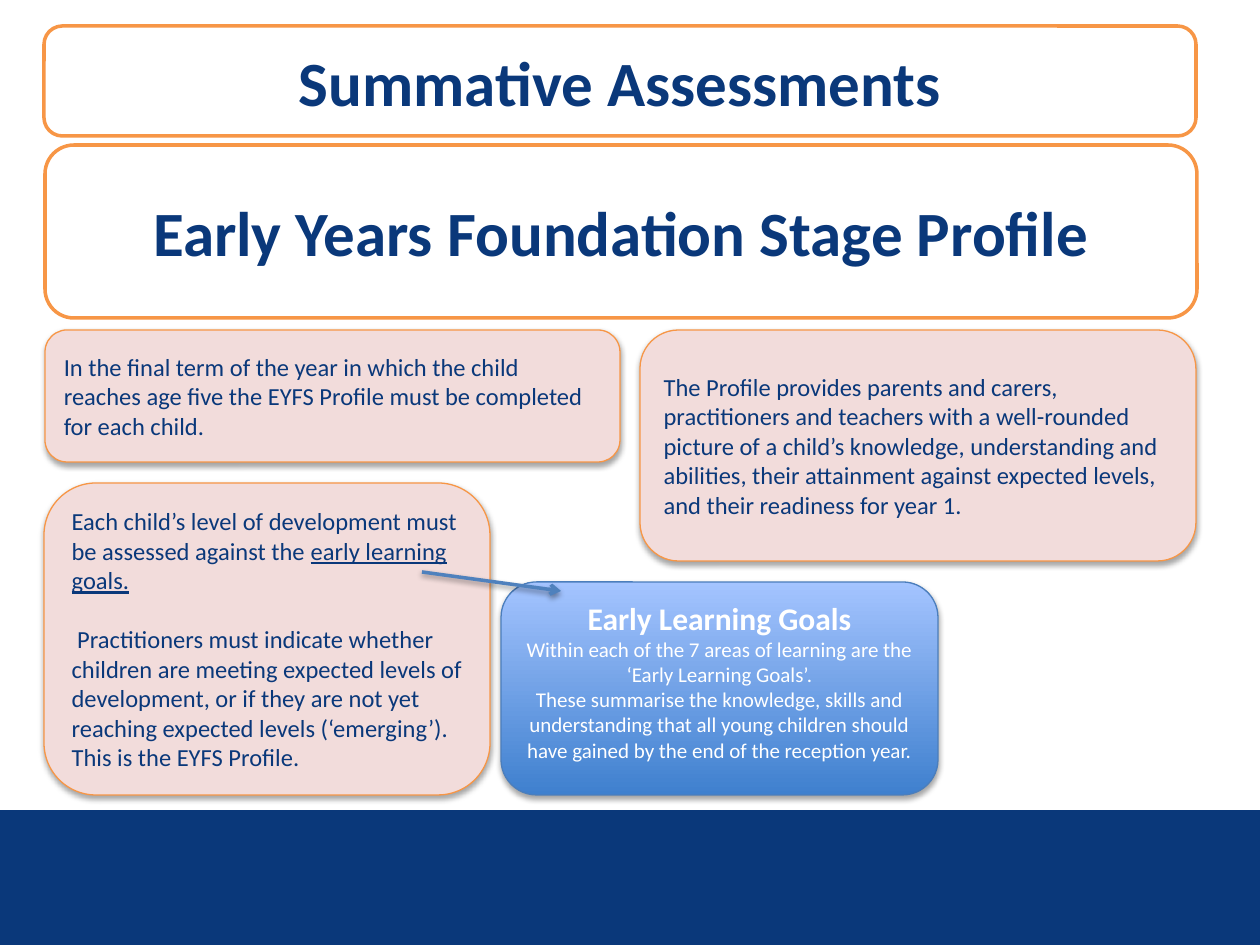
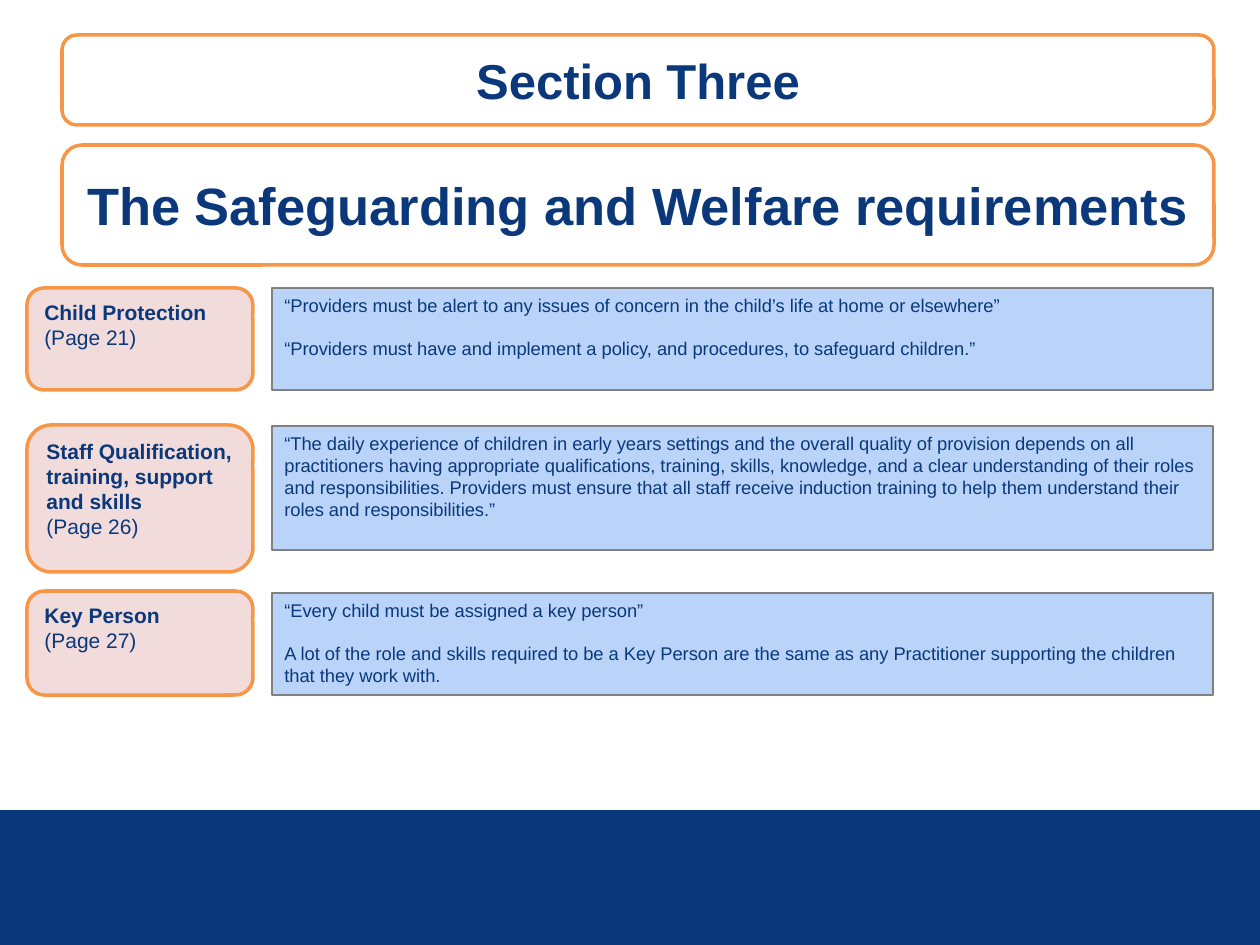
from dataclasses import dataclass
from lxml import etree
from pptx import Presentation
from pptx.dml.color import RGBColor
from pptx.enum.shapes import MSO_CONNECTOR, MSO_SHAPE
from pptx.enum.text import MSO_ANCHOR, PP_ALIGN
from pptx.oxml.ns import qn
from pptx.slide import Slide
from pptx.util import Emu, Pt

RECT = MSO_SHAPE.RECTANGLE
ROUND = MSO_SHAPE.ROUNDED_RECTANGLE
CALLOUT = MSO_SHAPE.ROUNDED_RECTANGULAR_CALLOUT
STRAIGHT = MSO_CONNECTOR.STRAIGHT
LEFT, CENTER = PP_ALIGN.LEFT, PP_ALIGN.CENTER
TOP, MIDDLE = MSO_ANCHOR.TOP, MSO_ANCHOR.MIDDLE

NAVY = RGBColor(0x0A, 0x38, 0x7A)
WHITE = RGBColor(0xFF, 0xFF, 0xFF)
ORANGE = RGBColor(0xF7, 0x96, 0x46)
PINK = RGBColor(0xF2, 0xDC, 0xDB)
PALE = RGBColor(0xB9, 0xD3, 0xF9)
GRAY = RGBColor(0x80, 0x80, 0x80)
DEEP = RGBColor(0x3F, 0x80, 0xCE)
LIGHT = RGBColor(0xA4, 0xC4, 0xFF)
EDGE = RGBColor(0x4B, 0x7E, 0xBC)
BLUE = RGBColor(0x4F, 0x81, 0xBD)

PX_PER_INCH = 126
WIDE, HIGH = 1260, 945


def px(n: int) -> Emu:
    return Emu(round(n * 914400 / PX_PER_INCH))


@dataclass(frozen=True)
class Para:
    text: str
    size: float
    bold: bool = False
    gap: int = 0  # points before
    under: str = ""  # underlined ending


@dataclass(frozen=True)
class Look:
    kind: MSO_SHAPE
    fill: tuple[RGBColor, ...]  # two colours run from bottom to top
    line: RGBColor | None = None
    width: float = 0.75
    shade: bool = False
    ink: RGBColor = NAVY
    align: PP_ALIGN = LEFT
    anchor: MSO_ANCHOR = TOP


@dataclass(frozen=True)
class Box:
    x: int
    y: int
    w: int
    h: int
    paras: tuple[Para, ...] = ()


# Shared styles
BAND = Look(RECT, (NAVY,))
TITLE = Look(ROUND, (WHITE,), ORANGE, 2, align=CENTER, anchor=MIDDLE)
CARD = Look(ROUND, (PINK,), ORANGE, shade=True, anchor=MIDDLE)
GOALS = Look(ROUND, (DEEP, LIGHT), EDGE, shade=True, ink=WHITE, align=CENTER)
LABEL = Look(CALLOUT, (PINK,), ORANGE, 2)
QUOTE = Look(RECT, (PALE,), GRAY)


def add_shade(effects: etree._Element, dist: int, alpha: int) -> None:
    shade = etree.SubElement(effects, qn("a:outerShdw"), blurRad="40000",
                             dist=str(dist), dir="5400000", rotWithShape="0")
    color = etree.SubElement(shade, qn("a:srgbClr"), val="000000")
    etree.SubElement(color, qn("a:alpha"), val=str(alpha * 1000))


def add_box(slide: Slide, box: Box, look: Look, face: str = "Calibri") -> None:
    shape = slide.shapes.add_shape(look.kind, px(box.x), px(box.y), px(box.w), px(box.h))
    if look.kind == CALLOUT:
        # The tip stays inside, so the outline reads as a rounded box
        for i, value in enumerate((0.499, -0.232, 0.167)):
            shape.adjustments[i] = value

    if len(look.fill) == 2:
        shape.fill.gradient()
        shape.fill.gradient_angle = 90
        for stop, color in zip(shape.fill.gradient_stops, look.fill):
            stop.color.rgb = color
    else:
        shape.fill.solid()
        shape.fill.fore_color.rgb = look.fill[0]
    if look.line is None:
        shape.line.fill.background()
    else:
        shape.line.color.rgb = look.line
        shape.line.width = Pt(look.width)
    shape.shadow.inherit = False
    if look.shade:
        add_shade(shape._element.spPr.find(qn("a:effectLst")), 23000, 35)

    frame = shape.text_frame
    frame.word_wrap = True
    frame.vertical_anchor = look.anchor
    for i, para in enumerate(box.paras):
        line = frame.add_paragraph() if i else frame.paragraphs[0]
        line.alignment = look.align
        if para.gap:
            line.space_before = Pt(para.gap)
        font = line.font
        font.name, font.size, font.bold = face, Pt(para.size), para.bold
        font.color.rgb = look.ink
        line.add_run().text = para.text
        if para.under:
            run = line.add_run()
            run.text = para.under
            run.font.underline = True


def add_arrow(slide: Slide, x1: int, y1: int, x2: int, y2: int) -> None:
    arrow = slide.shapes.add_connector(STRAIGHT, px(x1), px(y1), px(x2), px(y2))
    arrow.line.color.rgb = BLUE
    arrow.line.width = Pt(2)
    props = arrow._element.spPr
    etree.SubElement(props.find(qn("a:ln")), qn("a:tailEnd"), type="arrow")
    add_shade(etree.SubElement(props, qn("a:effectLst")), 20000, 38)


def add_slide(deck: Presentation, face: str, titles: tuple[Box, ...]) -> Slide:
    slide = deck.slides.add_slide(deck.slide_layouts[6])
    add_box(slide, Box(0, 810, WIDE, HIGH - 810), BAND)
    for title in titles:
        add_box(slide, title, TITLE, face)
    return slide


def build_profile(deck: Presentation) -> None:
    slide = add_slide(deck, "Calibri", (
        Box(45, 145, 1152, 173, (Para("Early Years Foundation Stage Profile", 36, True),)),
        Box(44, 26, 1152, 110, (Para("Summative Assessments", 36, True),)),
    ))
    cards = (
        Box(45, 330, 575, 132, (
            Para("In the final term of the year in which the child reaches age five "
                 "the EYFS Profile must be completed for each child.", 14),)),
        Box(640, 330, 556, 231, (
            Para("The Profile provides parents and carers, practitioners and teachers "
                 "with a well-rounded picture of a child’s knowledge, understanding and "
                 "abilities, their attainment against expected levels, and their "
                 "readiness for year 1.", 14),)),
        Box(44, 483, 446, 312, (
            Para("Each child’s level of development must be assessed against the ", 14,
                 under="early learning goals."),
            Para(" Practitioners must indicate whether children are meeting expected "
                 "levels of development, or if they are not yet reaching expected "
                 "levels (‘emerging’). This is the EYFS Profile.", 14, gap=17))),
    )
    for card in cards:
        add_box(slide, card, CARD)
    add_box(slide, Box(501, 582, 437, 213, (
        Para("Early Learning Goals", 18, True),
        Para("Within each of the 7 areas of learning are the ‘Early Learning Goals’.", 12),
        Para("These summarise the knowledge, skills and understanding that all young "
             "children should have gained by the end of the reception year.", 12),
    )), GOALS)
    add_arrow(slide, 422, 572, 561, 591)


def build_welfare(deck: Presentation) -> None:
    face = "Arial"
    slide = add_slide(deck, face, (
        Box(62, 35, 1152, 90, (Para("Section Three", 28, True),)),
        Box(62, 145, 1152, 120, (Para("The Safeguarding and Welfare requirements", 30, True),)),
    ))
    # Topic, page, label top and height, quote top and height, quotes
    rows = (
        ("Child Protection", 21, 288, 102, 288, 102, (
            "“Providers must be alert to any issues of concern in the child’s life at "
            "home or elsewhere”",
            "“Providers must have and implement a policy, and procedures, to safeguard "
            "children.”")),
        ("Staff Qualification, training, support and skills", 26, 425, 147, 426, 124, (
            "“The daily experience of children in early years settings and the overall "
            "quality of provision depends on all practitioners having appropriate "
            "qualifications, training, skills, knowledge, and a clear understanding of "
            "their roles and responsibilities. Providers must ensure that all staff "
            "receive induction training to help them understand their roles and "
            "responsibilities.”",)),
        ("Key Person", 27, 591, 104, 593, 102, (
            "“Every child must be assigned a key person”",
            "A lot of the role and skills required to be a Key Person are the same as "
            "any Practitioner supporting the children that they work with.")),
    )
    for topic, page, y, h, top, tall, quotes in rows:
        label = (Para(topic, 12, True), Para(f"(Page {page})", 12))
        add_box(slide, Box(27, y, 226, h, label), LABEL, face)
        paras = tuple(Para(quote, 10.5, gap=12 if i else 0) for i, quote in enumerate(quotes))
        add_box(slide, Box(272, top, 941, tall, paras), QUOTE, face)


def main() -> None:
    deck = Presentation()
    deck.slide_width, deck.slide_height = px(WIDE), px(HIGH)
    build_profile(deck)
    build_welfare(deck)
    deck.save("out.pptx")


if __name__ == "__main__":
    main()
